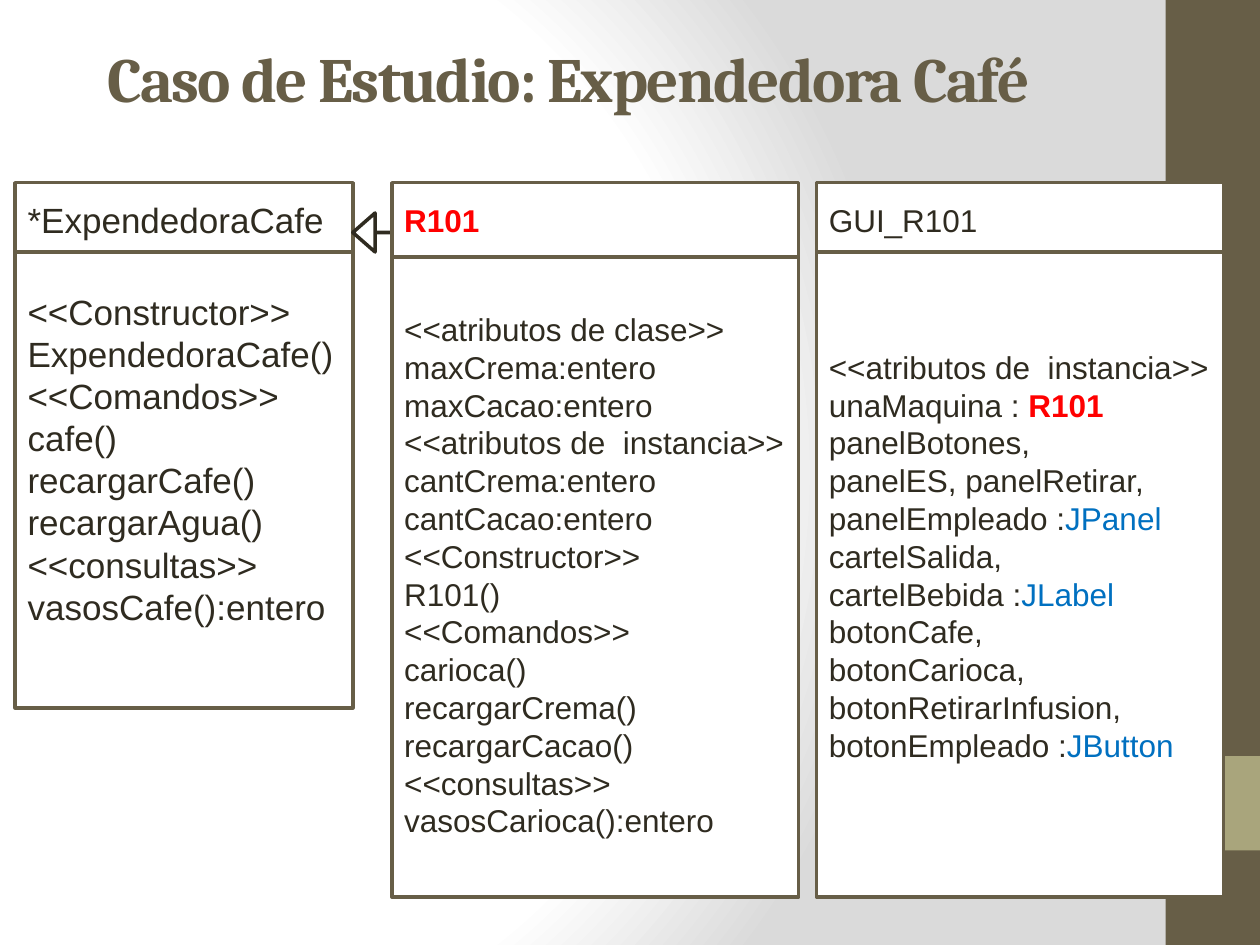
from lxml import etree
from pptx import Presentation
from pptx.dml.color import RGBColor
from pptx.enum.shapes import MSO_SHAPE
from pptx.enum.text import MSO_ANCHOR, MSO_AUTO_SIZE, PP_ALIGN
from pptx.oxml.ns import qn
from pptx.util import Pt

RECT, ARROW = MSO_SHAPE.RECTANGLE, MSO_SHAPE.RIGHT_ARROW
MIDDLE, LEFT, NO_FIT = MSO_ANCHOR.MIDDLE, PP_ALIGN.LEFT, MSO_AUTO_SIZE.NONE

COLORS = {
    "brown": "675E47", "olive": "A9A57C", "ink": "2F2B20", "white": "FFFFFF",
    "gray": "DADADA", "red": "FF0000", "blue": "0070C0",
}
TITLE = "Caso de Estudio: Expendedora Café"
BASE = {
    "left": 8.64, "width": 193, "height": 260.6, "size": 20, "spare": 1,
    "head": [("*ExpendedoraCafe",)],
    "body": [
        ("<<Constructor>>",), ("ExpendedoraCafe()",), ("<<Comandos>>",),
        ("cafe()",), ("recargarCafe()",), ("recargarAgua()",),
        ("<<consultas>>",), ("vasosCafe():entero",),
    ],
}
MODEL = {
    "left": 223.92, "width": 232.56, "height": 368.64, "size": 18, "spare": 0,
    "head": [("", "R101", "red")],
    "body": [
        ("<<atributos de clase>>",), ("maxCrema:entero",), ("maxCacao:entero",),
        ("<<atributos de  instancia>>",), ("cantCrema:entero",),
        ("cantCacao:entero",), ("<<Constructor>>",), ("R101()",),
        ("<<Comandos>>",), ("carioca()",), ("recargarCrema()",),
        ("recargarCacao()",), ("<<consultas>>",), ("vasosCarioca():entero",),
    ],
}
GUI = {
    "left": 466.56, "width": 232.56, "height": 368.64, "size": 18, "spare": 1,
    "head": [("GUI_R101",)],
    "body": [
        ("<<atributos de  instancia>>",), ("unaMaquina : ", "R101", "red"),
        ("panelBotones,",),
        ("panelES, panelRetirar, panelEmpleado :", "JPanel", "blue"),
        ("cartelSalida,",), ("cartelBebida :", "JLabel", "blue"),
        ("botonCafe,",), ("botonCarioca,",), ("botonRetirarInfusion,",),
        ("botonEmpleado :", "JButton", "blue"),
    ],
}
STOPS = [(0, "white"), (75, "white"), (100, "gray")]
FOCUS = {"l": 20, "t": 50, "r": 100, "b": 50}
HEAD_TOP, HEAD_HIGH, BODY_TOP = 104.4, 42.5, 144
LEADING = 1.2


def rgb(name):
    return RGBColor.from_string(COLORS[name])


def add_box(slide, kind, area, fill, line=None):
    box = slide.shapes.add_shape(kind, *[Pt(n) for n in area])
    box.shadow.inherit = False
    box.fill.solid()
    box.fill.fore_color.rgb = rgb(fill)
    if line:
        box.line.color.rgb = rgb(line)
        box.line.width = Pt(2)
    else:
        box.line.fill.background()
    return box


def write(box, lines, size, spare=0):
    frame = box.text_frame
    frame.word_wrap = True
    frame.vertical_anchor = MIDDLE
    frame.margin_bottom = Pt(3.6 + spare * size * LEADING)
    for i, (text, *tail) in enumerate(lines):
        para = frame.paragraphs[0] if i == 0 else frame.add_paragraph()
        para.alignment = LEFT
        para.line_spacing = Pt(size * LEADING)
        para.font.name = "Arial"
        para.font.size = Pt(size)
        para.font.color.rgb = rgb("ink")
        if text:
            run = para.add_run()
            run.text = text
            run.font.color.rgb = rgb("ink")
        if tail:
            run = para.add_run()
            run.text, color = tail
            run.font.color.rgb = rgb(color)
            run.font.bold = color == "red"


def add_head(slide, unit):
    area = unit["left"], HEAD_TOP, unit["width"], HEAD_HIGH
    box = add_box(slide, RECT, area, "white", "brown")
    write(box, unit["head"], unit["size"])


def add_body(slide, unit):
    area = unit["left"], BODY_TOP, unit["width"], unit["height"]
    box = add_box(slide, RECT, area, "white", "brown")
    write(box, unit["body"], unit["size"], unit["spare"])


def paint_back(slide):
    slide.background.fill.gradient()
    grad = slide.element.find(".//" + qn("a:gradFill"))
    for child in list(grad):
        grad.remove(child)
    stops = etree.SubElement(grad, qn("a:gsLst"))
    for pos, name in STOPS:
        stop = etree.SubElement(stops, qn("a:gs"), pos=str(pos * 1000))
        etree.SubElement(stop, qn("a:srgbClr"), val=COLORS[name])
    ring = etree.SubElement(grad, qn("a:path"), {"path": "circle"})
    sides = {side: str(n * 1000) for side, n in FOCUS.items()}
    etree.SubElement(ring, qn("a:fillToRect"), sides)


def set_title(slide):
    title = slide.shapes.title
    title.left, title.top, title.width, title.height = Pt(54), Pt(0), Pt(612), Pt(88.5)
    frame = title.text_frame
    frame.text = TITLE
    frame.auto_size = NO_FIT
    frame.word_wrap = True
    frame.vertical_anchor = MIDDLE
    para = frame.paragraphs[0]
    para.alignment = LEFT
    font = para.runs[0].font
    font.name, font.size, font.bold = "Cambria", Pt(36), True
    font.color.rgb = rgb("brown")
    title.element.find(".//" + qn("a:rPr")).set("spc", "-100")


def main():
    deck = Presentation()
    deck.slide_width, deck.slide_height = Pt(720), Pt(540)
    slide = deck.slides.add_slide(deck.slide_layouts[5])
    paint_back(slide)
    set_title(slide)
    add_box(slide, RECT, (666, 0, 54, 540), "brown")
    add_box(slide, RECT, (666, 432, 54, 54), "olive")
    add_body(slide, MODEL)
    for unit in (GUI, BASE):
        add_head(slide, unit)
        add_body(slide, unit)
    arrow = add_box(slide, ARROW, (201.6, 121.68, 69.84, 22.32), "white", "ink")
    arrow.rotation = 180
    arrow.adjustments[0], arrow.adjustments[1] = 0, 0.57
    add_head(slide, MODEL)
    deck.save("out.pptx")


if __name__ == "__main__":
    main()
